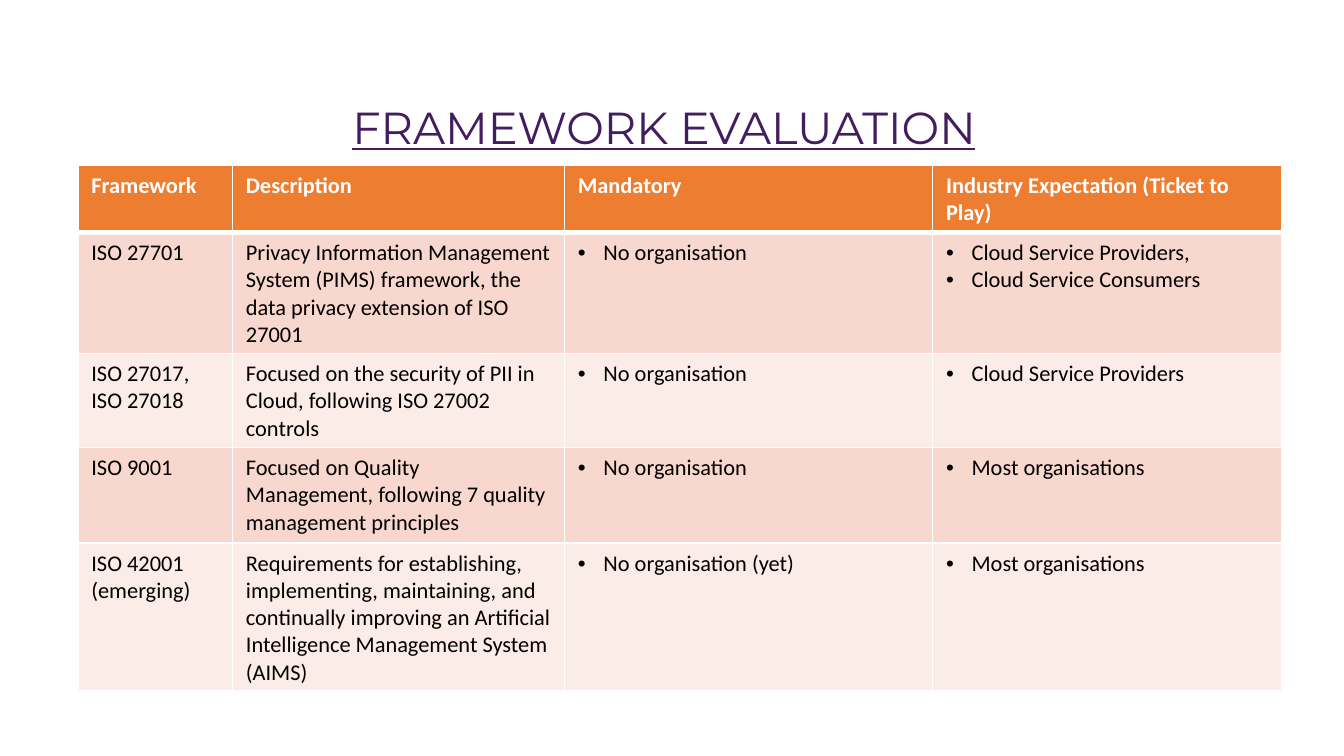
from lxml import etree
from pptx import Presentation
from pptx import util as u
from pptx.dml.color import RGBColor
from pptx.enum import text
from pptx.oxml import ns

SLIDE_WIDTH = 10
SLIDE_HEIGHT = SLIDE_WIDTH * 9 / 16
COLUMN_WIDTHS = [1.15, 2.47, 2.74, 2.6]
ROW_HEIGHTS = [0.5, 0.9, 0.7, 0.71, 1.1]
HEADINGS = ["Framework", "Description", "Mandatory", "Industry Expectation (Ticket to Play)"]
FRAMEWORKS = [
    (["ISO 27701"],
     ["Privacy Information Management System (PIMS) framework, the data privacy extension of ISO 27001"],
     ["No organisation"],
     ["Cloud Service Providers,", "Cloud Service Consumers"]),
    (["ISO 27017,", "ISO 27018"],
     ["Focused on the security of PII in Cloud, following ISO 27002 controls"],
     ["No organisation"],
     ["Cloud Service Providers"]),
    (["ISO 9001"],
     ["Focused on Quality Management, following 7 quality management principles"],
     ["No organisation"],
     ["Most organisations"]),
    (["ISO 42001 (emerging)"],
     ["Requirements for establishing, implementing, maintaining, and continually improving "
      "an Artificial Intelligence Management System (AIMS)"],
     ["No organisation (yet)"],
     ["Most organisations"]),
]


def colour(value):
    """Turn a hex string into a colour."""
    return RGBColor.from_string(value)


def add_run(paragraph, wording, font, size, hex_colour, bold=False, underline=False):
    """Append one formatted run to a paragraph."""
    run = paragraph.add_run()
    run.text = wording
    run.font.name = font
    run.font.size = u.Pt(size)
    run.font.bold = bold
    run.font.underline = underline
    run.font.color.rgb = colour(hex_colour)


def add_bullet(paragraph):
    """Give a paragraph a hanging black bullet."""
    properties = paragraph._p.get_or_add_pPr()
    properties.set("marL", str(u.Inches(0.19)))
    properties.set("indent", str(-u.Inches(0.19)))
    bullet_colour = etree.SubElement(properties, ns.qn("a:buClr"))
    etree.SubElement(bullet_colour, ns.qn("a:srgbClr"), val="000000")
    etree.SubElement(properties, ns.qn("a:buFont"), typeface="Arial")
    etree.SubElement(properties, ns.qn("a:buChar"), char="•")


def add_borders(cell, bottom_width):
    """Draw white lines round a cell, with the given width at its bottom."""
    properties = cell._tc.get_or_add_tcPr()
    for side, width in (("L", 1), ("R", 1), ("T", 1), ("B", bottom_width)):
        line = etree.SubElement(properties, ns.qn(f"a:ln{side}"), w=str(u.Pt(width)))
        fill = etree.SubElement(line, ns.qn("a:solidFill"))
        etree.SubElement(fill, ns.qn("a:srgbClr"), val="FFFFFF")


def fill_cell(cell, lines, fill, ink, heading=False, bulleted=False):
    """Write a cell's paragraphs and set its fill and borders."""
    add_borders(cell, 3 if heading else 1)
    cell.fill.solid()
    cell.fill.fore_color.rgb = colour(fill)
    frame = cell.text_frame
    for index, wording in enumerate(lines):
        paragraph = frame.add_paragraph() if index else frame.paragraphs[0]
        if bulleted:
            add_bullet(paragraph)
        add_run(paragraph, wording, "Calibri", 12, ink, bold=heading)


def place_title(slide, left, top, width, height):
    """Put the underlined heading in the title placeholder."""
    title = slide.shapes.title
    title.left, title.top = u.Inches(left), u.Inches(top)
    title.width, title.height = u.Inches(width), u.Inches(height)
    frame = title.text_frame
    frame.word_wrap = True
    frame.auto_size = text.MSO_AUTO_SIZE.SHAPE_TO_FIT_TEXT
    frame.vertical_anchor = text.MSO_ANCHOR.TOP
    paragraph = frame.paragraphs[0]
    paragraph.alignment = text.PP_ALIGN.CENTER
    add_run(paragraph, "FRAMEWORK EVALUATION", "Montserrat", 24, "441D60", underline=True)


def place_frameworks(slide, left, top, width, height):
    """Build the table that compares the frameworks."""
    table = slide.shapes.add_table(
        len(ROW_HEIGHTS), len(COLUMN_WIDTHS),
        u.Inches(left), u.Inches(top), u.Inches(width), u.Inches(height)).table
    for column, share in zip(table.columns, COLUMN_WIDTHS):
        column.width = u.Inches(width * share / sum(COLUMN_WIDTHS))
    for row, share in zip(table.rows, ROW_HEIGHTS):
        row.height = u.Inches(height * share / sum(ROW_HEIGHTS))
    for column, heading in enumerate(HEADINGS):
        fill_cell(table.cell(0, column), [heading], "ED7D31", "FFFFFF", heading=True)
    for row, framework in enumerate(FRAMEWORKS, 1):
        band = "F8D7CE" if row % 2 else "FCECE8"
        for column, lines in enumerate(framework):
            fill_cell(table.cell(row, column), lines, band, "000000", bulleted=column >= 2)


def main():
    """Build and save the framework evaluation slide."""
    deck = Presentation()
    deck.slide_width, deck.slide_height = u.Inches(SLIDE_WIDTH), u.Inches(SLIDE_HEIGHT)
    slide = deck.slides.add_slide(deck.slide_layouts[5])
    slide.background.fill.solid()
    slide.background.fill.fore_color.rgb = colour("FFFFFF")
    place_title(slide, 0.34, 0.69, 9.2, 0.5)
    place_frameworks(slide, 0.58, 1.23, 8.96, 3.91)
    deck.save("out.pptx")


if __name__ == "__main__":
    main()
